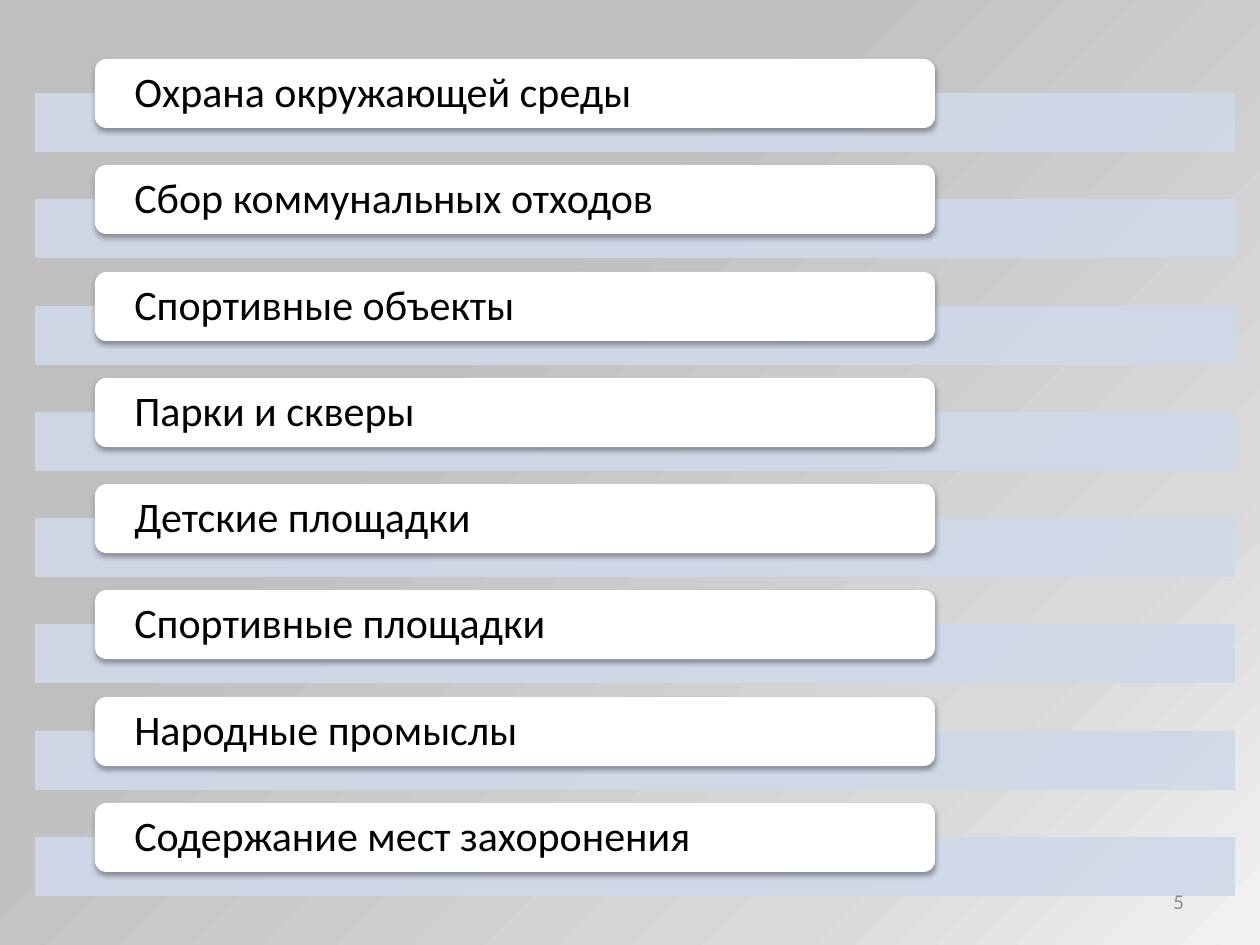
from lxml.etree import SubElement
from pptx import Presentation
from pptx.dml.color import RGBColor
from pptx.enum.shapes import MSO_SHAPE as Shape
from pptx.enum.text import MSO_ANCHOR as Anchor, PP_ALIGN as Align
from pptx.oxml import parse_xml
from pptx.oxml.ns import nsdecls, qn
from pptx.util import Emu, Pt

PX = 914400 / 126
COLORS = {
    "band": "D0D8E8", "label": "FFFFFF", "text": "000000", "number": "8C8C8C",
    "glow": "F2F2F2", "middle": "D9D9D9", "edge": "BFBFBF",
}
TOPICS = [
    "Охрана окружающей среды",
    "Сбор коммунальных отходов",
    "Спортивные объекты",
    "Парки и скверы",
    "Детские площадки",
    "Спортивные площадки",
    "Народные промыслы",
    "Содержание мест захоронения",
]
FIRST_TOP, LAST_TOP = 59, 803
LABEL_FRAME = {"margin_left": 36, "margin_right": 36, "margin_top": 0, "margin_bottom": 0}
NUMBER_FRAME = {"margin_left": 13, "margin_right": 13, "margin_top": 6, "margin_bottom": 6}


def px(value):
    return Emu(round(value * PX))


def color(name):
    return RGBColor.from_string(COLORS[name])


def set_background(page):
    """Radial gradient that is lightest in the bottom right corner."""
    stops = "".join(
        f'<a:gs pos="{place * 1000}"><a:srgbClr val="{COLORS[name]}">'
        f'<a:alpha val="{alpha * 1000}"/></a:srgbClr></a:gs>'
        for place, name, alpha in [(0, "glow", 100), (22, "middle", 13), (65, "edge", 28)]
    )
    properties = page.background.fill
    properties.solid()
    solid = page.element.find(".//" + qn("a:solidFill"))
    gradient = parse_xml(
        f'<a:gradFill rotWithShape="1" {nsdecls("a")}><a:gsLst>{stops}</a:gsLst>'
        '<a:path path="circle"><a:fillToRect l="100000" t="100000"/></a:path></a:gradFill>'
    )
    solid.getparent().replace(solid, gradient)


def add_block(page, kind, left, top, width, height, fill):
    box = page.shapes.add_shape(kind, px(left), px(top), px(width), px(height))
    box.shadow.inherit = False
    box.fill.solid()
    box.fill.fore_color.rgb = color(fill)
    box.line.fill.background()
    return box


def write(box, words, frame_format, para_format, font_format, ink):
    frame = box.text_frame
    frame.word_wrap = True
    frame.vertical_anchor = Anchor.MIDDLE
    for name, value in frame_format.items():
        setattr(frame, name, px(value))
    para = frame.paragraphs[0]
    for name, value in para_format.items():
        setattr(para, name, value)
    span = para.add_run()
    span.text = words
    for name, value in font_format.items():
        setattr(span.font, name, value)
    span.font.color.rgb = color(ink)


def add_band(page, top):
    band = add_block(page, Shape.RECTANGLE, 35, top, 1200, 59, "band")
    fill = band.element.spPr.find(qn("a:solidFill"))
    SubElement(fill[0], qn("a:alpha"), val="90000")


def add_label(page, top, words):
    label = add_block(page, Shape.ROUNDED_RECTANGLE, 95, top, 840, 69, "label")
    effects = label.element.spPr.find(qn("a:effectLst"))
    effects.append(parse_xml(
        f'<a:outerShdw blurRad="40000" dist="23000" dir="5400000" rotWithShape="0" {nsdecls("a")}>'
        f'<a:srgbClr val="{COLORS["text"]}"><a:alpha val="35000"/></a:srgbClr></a:outerShdw>'
    ))
    write(label, words, LABEL_FRAME, {"alignment": Align.LEFT, "line_spacing": 0.9},
          {"name": "Calibri", "size": Pt(24)}, "text")


def add_page_number(page, number):
    box = page.shapes.add_textbox(px(903), px(876), px(294), px(50))
    write(box, number, NUMBER_FRAME, {"alignment": Align.RIGHT},
          {"name": "Calibri", "size": Pt(12)}, "number")


def main():
    deck = Presentation()
    deck.slide_width, deck.slide_height = px(1260), px(945)
    page = deck.slides.add_slide(deck.slide_layouts[6])
    set_background(page)

    # Evenly spaced topics, each label overlapping its band
    step = (LAST_TOP - FIRST_TOP) / (len(TOPICS) - 1)
    for index, topic in enumerate(TOPICS):
        top = round(FIRST_TOP + index * step)
        add_band(page, top + 34)
        add_label(page, top, topic)

    add_page_number(page, "5")
    deck.save("out.pptx")


if __name__ == "__main__":
    main()
